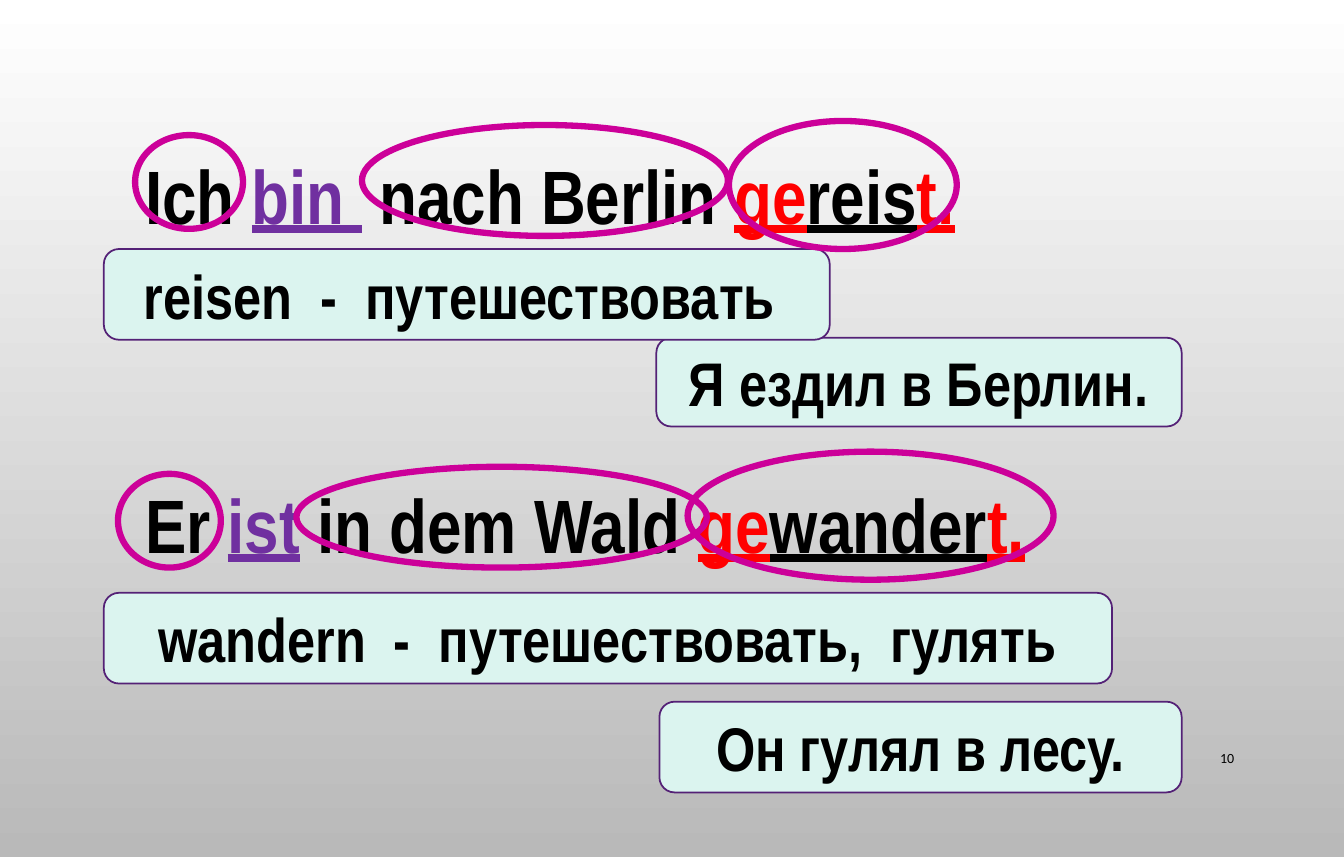
from pptx import Presentation
from pptx.dml.color import RGBColor
from pptx.enum.shapes import MSO_SHAPE
from pptx.enum.text import MSO_ANCHOR, PP_ALIGN
from pptx.util import Inches, Pt

ROUND, OVAL = MSO_SHAPE.ROUNDED_RECTANGLE, MSO_SHAPE.OVAL
MIDDLE = MSO_ANCHOR.MIDDLE
LEFT, CENTER, RIGHT = PP_ALIGN.LEFT, PP_ALIGN.CENTER, PP_ALIGN.RIGHT

BLACK = RGBColor(0x00, 0x00, 0x00)
RED = RGBColor(0xFF, 0x00, 0x00)
VIOLET = RGBColor(0x70, 0x30, 0xA0)
MINT = RGBColor(0xDB, 0xF4, 0xEF)
PLUM = RGBColor(0x54, 0x21, 0x76)
PINK = RGBColor(0xCC, 0x00, 0x99)
WHITE = RGBColor(0xFF, 0xFF, 0xFF)
GREY = RGBColor(0xB9, 0xB9, 0xB9)

# Content: sentences as (text, colour, underlined)
LINES = [
    [("Ich ", BLACK, False), ("bin ", VIOLET, True),
     (" nach Berlin ", BLACK, False),
     ("ge", RED, True), ("reis", BLACK, True), ("t.", RED, True)],
    [("Er ", BLACK, False), ("ist", VIOLET, True),
     (" in dem Wald ", BLACK, False),
     ("ge", RED, True), ("wander", BLACK, True), ("t.", RED, True)],
]
# Cards as (text, left, top, width, height)
CARDS = [
    ("Я ездил в Берлин.", 6.51, 3.35, 5.21, 0.88),
    ("Он гулял в лесу.", 6.54, 6.96, 5.18, 0.9),
    ("reisen  -  путешествовать ", 1.03, 2.47, 7.2, 0.9),
    ("wandern  -  путешествовать,  гулять", 1.03, 5.88, 10, 0.9),
]
# Rings around the sentence parts: left, top, width, height
RINGS = [
    (1.34, 1.34, 1.07, 0.93), (3.59, 1.24, 3.63, 1.1), (7.23, 1.2, 2.26, 1.27),
    (1.17, 4.7, 1.02, 0.93), (2.94, 4.63, 4.07, 1), (6.82, 4.48, 3.63, 1.27),
]
NUMBER = "10"

BIG = {"name": "Arial Narrow", "size": Pt(54), "bold": True}
MID = {"name": "Arial Narrow", "size": Pt(44), "bold": True}
SMALL = {"name": "Calibri", "size": Pt(10)}


def write(par, runs, form, align):
    par.alignment = align
    for text, color, under in runs:
        run = par.add_run()
        run.text = text
        for key, value in form.items():
            setattr(run.font, key, value)
        run.font.color.rgb = color
        run.font.underline = under


def draw(kind, box, line, width):
    shape = slide.shapes.add_shape(kind, *map(Inches, box))
    shape.shadow.inherit = False
    shape.line.color.rgb = line
    shape.line.width = Pt(width)
    return shape


def add_text(*box):
    frame = slide.shapes.add_textbox(*map(Inches, box)).text_frame
    frame.word_wrap = True
    return frame


deck = Presentation()
deck.slide_width, deck.slide_height = Inches(13.33), Inches(8.5)
slide = deck.slides.add_slide(deck.slide_layouts[6])

# Background fading downwards
back = slide.background.fill
back.gradient()
back.gradient_angle = 270
for stop, color, place in zip(back.gradient_stops, (WHITE, GREY), (0, 1)):
    stop.color.rgb = color
    stop.position = place

# Sentences
frame = add_text(1.34, 1.25, 11.33, 6.29)
for i, runs in enumerate(LINES):
    par = frame.add_paragraph() if i else frame.paragraphs[0]
    par.line_spacing = 1.2
    par.space_before = Pt(157 * i)
    write(par, runs, BIG, LEFT)

# Cards
for text, *box in CARDS:
    card = draw(ROUND, box, PLUM, 1.25)
    card.fill.solid()
    card.fill.fore_color.rgb = MINT
    card.text_frame.word_wrap = True
    card.text_frame.vertical_anchor = MIDDLE
    write(card.text_frame.paragraphs[0], [(text, BLACK, False)], MID, CENTER)

# Rings
for box in RINGS:
    draw(OVAL, box, PINK, 4.5).fill.background()

# Slide number
frame = add_text(11.5, 7.29, 0.84, 0.45)
frame.vertical_anchor = MIDDLE
write(frame.paragraphs[0], [(NUMBER, BLACK, False)], SMALL, RIGHT)

deck.save("out.pptx")
